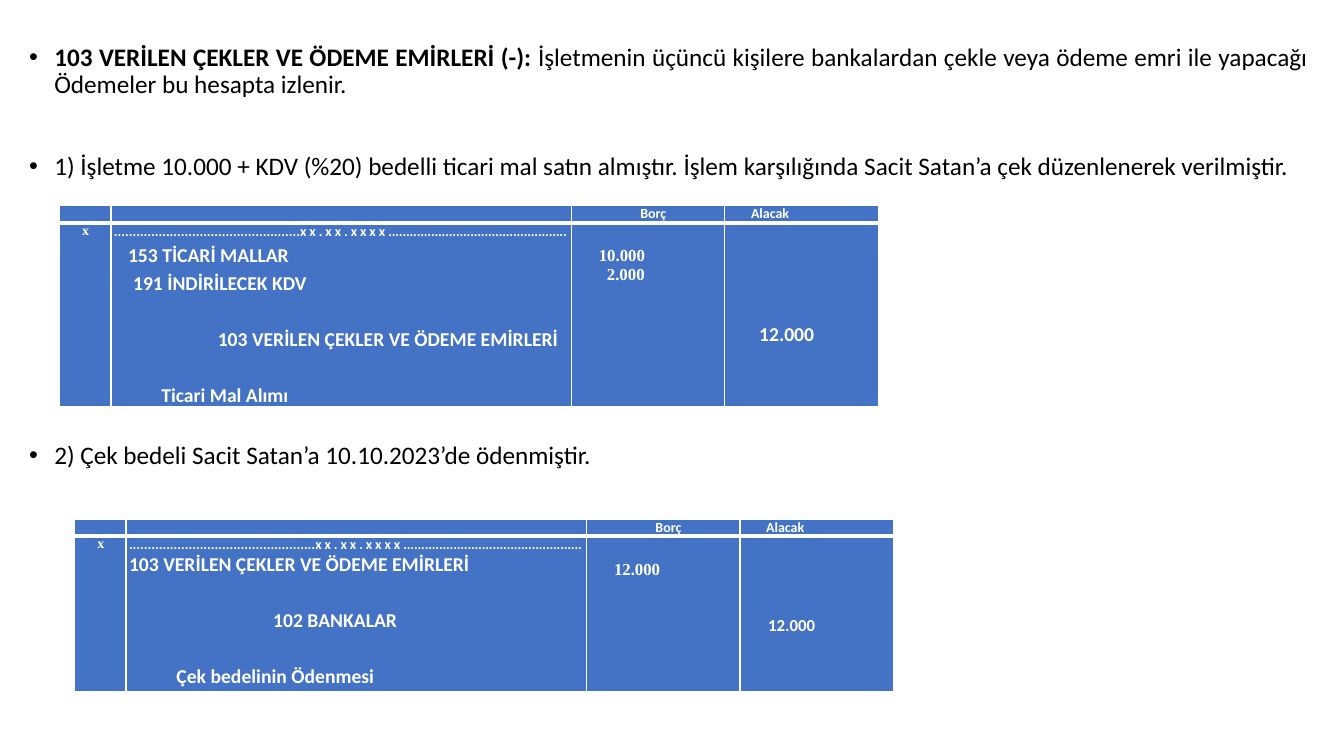
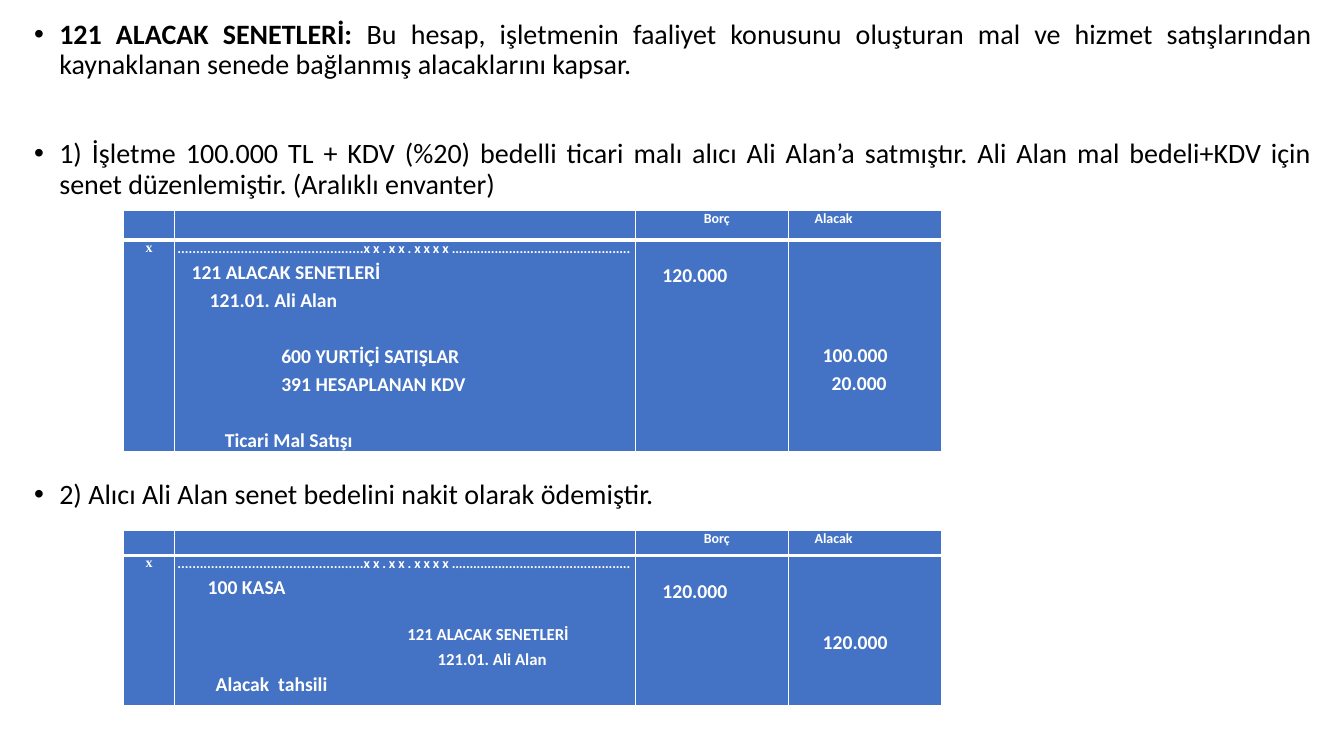
from dataclasses import dataclass

from lxml.etree import SubElement
from pptx import Presentation
from pptx.dml.color import RGBColor
from pptx.enum.text import PP_ALIGN as Align
from pptx.oxml.ns import qn
from pptx.util import Inches, Pt

BLACK = RGBColor(0x00, 0x00, 0x00)
WHITE = RGBColor(0xFF, 0xFF, 0xFF)
LEDGER_BLUE = RGBColor(0x44, 0x72, 0xC4)
SANS = "Calibri"
SERIF = "Times New Roman"
COLUMN_WIDTHS = (0.51, 4.57, 1.52, 1.52)
DOTS = "." * 50
SKIPPED_LINE = 23
DEBIT_TOP = 0.24


@dataclass
class Entry:
    text: str
    indent: float = 0
    before: float = 3
    size: float = 14
    font: str = SANS
    align: Align = Align.LEFT


@dataclass
class Ledger:
    left: float
    top: float
    row_heights: tuple
    accounts: list
    debits: list
    credit_top: float
    credits: list


def add_run(paragraph, text, size, color, bold=False, font=SANS, spacing=0):
    run = paragraph.add_run()
    run.text = text
    run.font.size = Pt(size)
    run.font.name = font
    run.font.bold = bold
    run.font.color.rgb = color
    if spacing:
        run.font._element.set("spc", str(round(spacing * 100)))


def set_indent(paragraph, left, first=0):
    properties = paragraph._p.get_or_add_pPr()
    properties.set("marL", str(Inches(left)))
    properties.set("indent", str(Inches(first)))
    return properties


def add_bullets(slide, box, size, bullets):
    frame = slide.shapes.add_textbox(*map(Inches, box)).text_frame
    frame.word_wrap = True
    for index, (before, heading, text) in enumerate(bullets):
        paragraph = frame.paragraphs[0] if index == 0 else frame.add_paragraph()
        paragraph.alignment = Align.JUSTIFY
        paragraph.line_spacing = 0.9
        paragraph.space_before = Pt(before)
        properties = set_indent(paragraph, 0.25, -0.25)
        SubElement(properties, qn("a:buFont")).set("typeface", "Arial")
        SubElement(properties, qn("a:buChar")).set("char", "•")
        if heading:
            add_run(paragraph, heading, size, BLACK, bold=True)
        add_run(paragraph, text, size, BLACK)


def style_cell(cell, top_line, bottom_line, margin_top=0):
    cell.margin_left = cell.margin_right = cell.margin_bottom = 0
    cell.margin_top = Inches(margin_top)
    properties = cell._tc.get_or_add_tcPr()
    sides = {"lnL": 1, "lnR": 1, "lnT": top_line, "lnB": bottom_line}
    for side, width in sides.items():
        line = SubElement(properties, qn(f"a:{side}"))
        line.set("w", str(Pt(width)))
        fill = SubElement(line, qn("a:solidFill"))
        SubElement(fill, qn("a:srgbClr")).set("val", str(WHITE))
    cell.fill.solid()
    cell.fill.fore_color.rgb = LEDGER_BLUE


def next_paragraph(frame):
    first = frame.paragraphs[0]
    return frame.add_paragraph() if first.runs else first


def write_entries(cell, entries):
    for entry in entries:
        paragraph = next_paragraph(cell.text_frame)
        paragraph.alignment = entry.align
        paragraph.space_before = Pt(entry.before)
        set_indent(paragraph, entry.indent)
        add_run(paragraph, entry.text, entry.size, WHITE, True, entry.font)
    if not entries:
        end = SubElement(cell.text_frame.paragraphs[0]._p, qn("a:endParaRPr"))
        end.set("sz", "1000")


def write_date_line(cell):
    paragraph = cell.text_frame.paragraphs[0]
    set_indent(paragraph, 0.03)
    for text, spacing in ((DOTS, 0), ("xx.xx.xxxx", 2.1), (DOTS, -0.1)):
        add_run(paragraph, text, 10, WHITE, True, spacing=spacing)


def add_ledger(slide, ledger):
    table = slide.shapes.add_table(
        2, 4, Inches(ledger.left), Inches(ledger.top),
        Inches(sum(COLUMN_WIDTHS)), Inches(sum(ledger.row_heights)),
    ).table
    for column, width in zip(table.columns, COLUMN_WIDTHS):
        column.width = Inches(width)
    for row, height in zip(table.rows, ledger.row_heights):
        row.height = Inches(height)

    headings = (
        [], [],
        [Entry("Borç", 0.1, size=10, align=Align.CENTER)],
        [Entry("Alacak", 0.26, size=10)],
    )
    mark = [Entry("x", 0.01, size=10, font=SERIF, align=Align.CENTER)]
    contents = (mark, ledger.accounts, ledger.debits, ledger.credits)
    tops = (0, 0, DEBIT_TOP, ledger.credit_top)
    for index in range(len(COLUMN_WIDTHS)):
        heading, body = table.cell(0, index), table.cell(1, index)
        style_cell(heading, 1, 3)
        style_cell(body, 3, 1, tops[index])
        if index == 1:
            write_date_line(body)
        write_entries(heading, headings[index])
        write_entries(body, contents[index])


def add_cheques_slide(slide):
    add_bullets(slide, (0.19, 0.39, 12.88, 6.93), 18, [
        (10, "103 VERİLEN ÇEKLER VE ÖDEME EMİRLERİ (-): ",
         "İşletmenin üçüncü kişilere bankalardan çekle veya ödeme emri ile "
         "yapacağı Ödemeler bu hesapta izlenir."),
        (39.3, "",
         "1) İşletme 10.000 + KDV (%20) bedelli ticari mal satın almıştır. "
         "İşlem karşılığında Sacit Satan’a çek düzenlenerek verilmiştir."),
        (187, "", "2) Çek bedeli Sacit Satan’a 10.10.2023’de ödenmiştir."),
    ])
    add_ledger(slide, Ledger(
        0.59, 2.04, (0.17, 1.81),
        accounts=[
            Entry("153 TİCARİ MALLAR", 0.17),
            Entry("191 İNDİRİLECEK KDV", 0.22),
            Entry("103 VERİLEN ÇEKLER VE ÖDEME EMİRLERİ", 1.06, SKIPPED_LINE),
            Entry("Ticari Mal Alımı", 0.5, SKIPPED_LINE),
        ],
        debits=[
            Entry("10.000", 0.27, 0, 12, SERIF),
            Entry("2.000", 0.35, 0, 12, SERIF),
        ],
        credit_top=0.99,
        credits=[Entry("12.000", 0.34)],
    ))
    add_ledger(slide, Ledger(
        0.74, 5.15, (0.17, 1.54),
        accounts=[
            Entry("103 VERİLEN ÇEKLER VE ÖDEME EMİRLERİ", 0.03, 0),
            Entry("102 BANKALAR", 1.46, SKIPPED_LINE),
            Entry("Çek bedelinin Ödenmesi", 0.5, SKIPPED_LINE),
        ],
        debits=[Entry("12.000", 0.27, 0, 12, SERIF)],
        credit_top=0.79,
        credits=[Entry("12.000", 0.28, size=12)],
    ))


def add_notes_receivable_slide(slide):
    add_bullets(slide, (0.24, 0.15, 12.87, 7.24), 20, [
        (10, "121 ALACAK SENETLERİ: ",
         "Bu hesap, işletmenin faaliyet konusunu oluşturan mal ve hizmet "
         "satışlarından kaynaklanan senede bağlanmış alacaklarını kapsar."),
        (42.2, "",
         "1) İşletme 100.000 TL + KDV (%20) bedelli ticari malı alıcı Ali "
         "Alan’a satmıştır. Ali Alan mal bedeli+KDV için senet "
         "düzenlemiştir. (Aralıklı envanter)"),
        (200, "", "2) Alıcı Ali Alan senet bedelini nakit olarak ödemiştir."),
    ])
    add_ledger(slide, Ledger(
        1.22, 2.09, (0.29, 2.09),
        accounts=[
            Entry("121 ALACAK SENETLERİ", 0.17),
            Entry("121.01. Ali Alan", 0.35),
            Entry("600 YURTİÇİ SATIŞLAR", 1.06, SKIPPED_LINE),
            Entry("391 HESAPLANAN KDV", 1.06),
            Entry("Ticari Mal Satışı", 0.5, SKIPPED_LINE),
        ],
        debits=[Entry("120.000", 0.27)],
        credit_top=1.03,
        credits=[Entry("100.000", 0.34), Entry("20.000", 0.43)],
    ))
    add_ledger(slide, Ledger(
        1.22, 5.26, (0.25, 1.49),
        accounts=[
            Entry("100 KASA", 0.33, 2.5),
            Entry("121 ALACAK SENETLERİ", 2.31, 17.8, 12),
            Entry("121.01. Ali Alan", 2.61, size=12),
            Entry("Alacak  tahsili", 0.41, 2.5),
        ],
        debits=[Entry("120.000", 0.27)],
        credit_top=0.75,
        credits=[Entry("120.000", 0.34)],
    ))


def main():
    deck = Presentation()
    deck.slide_width = Inches(13.33)
    deck.slide_height = Inches(7.5)
    blank = deck.slide_layouts[6]
    for build in (add_cheques_slide, add_notes_receivable_slide):
        build(deck.slides.add_slide(blank))
    deck.save("out.pptx")


if __name__ == "__main__":
    main()
